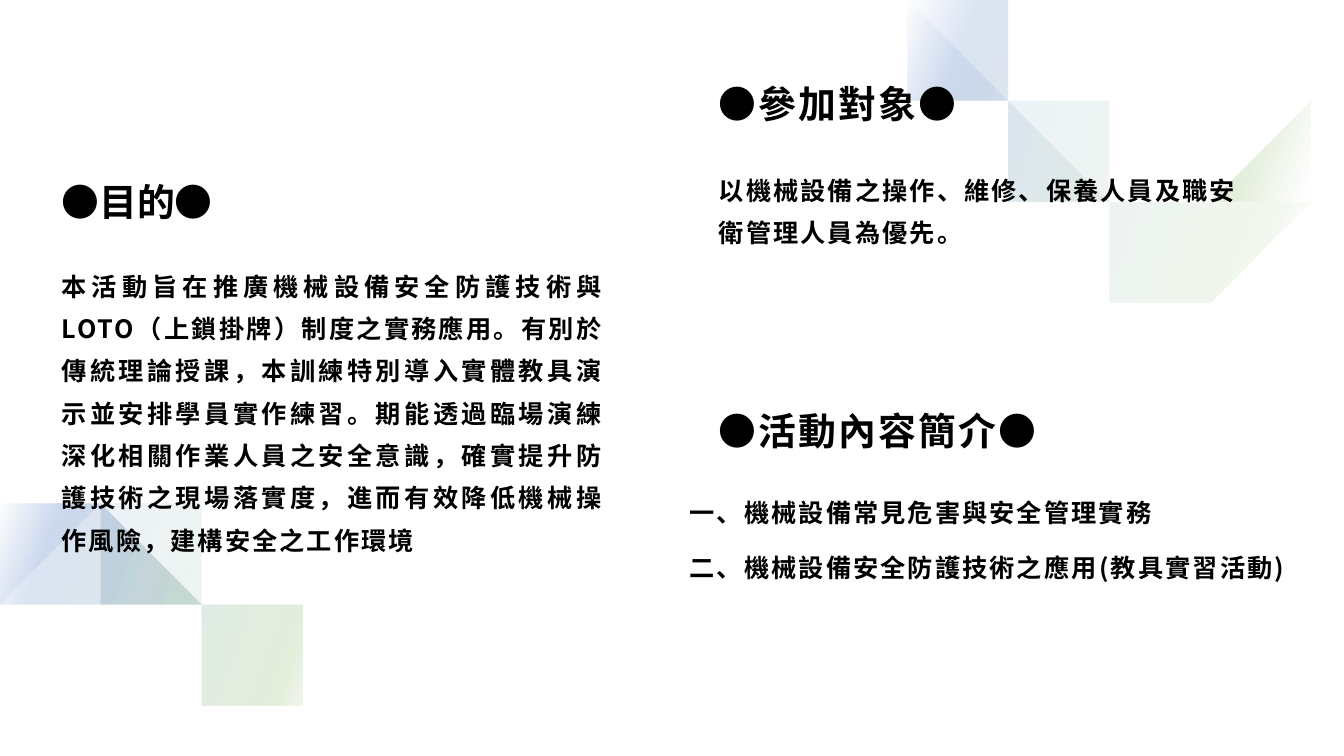
from lxml import etree
from pptx import Presentation
from pptx.dml.color import RGBColor
from pptx.enum.shapes import MSO_SHAPE
from pptx.enum.text import MSO_ANCHOR, PP_ALIGN
from pptx.oxml.ns import qn
from pptx.util import Inches, Pt

TOP, BOTTOM = MSO_ANCHOR.TOP, MSO_ANCHOR.BOTTOM
LEFT, JUSTIFY = PP_ALIGN.LEFT, PP_ALIGN.JUSTIFY
FONT = "Noto Sans CJK JP"
SLIDE_W, SLIDE_H = 13.33, 7.5

# (left, top, width, height), text, letter spacing in points
HEADINGS = [
    ((0.49, 1.69, 5.1, 0.63), "●目的●", 0),
    ((7.01, 0.51, 5.1, 0.84), "●參加對象●", 1.5),
    ((7.01, 3.84, 5.1, 0.75), "●活動內容簡介●", 1.5),
]

# (left, top, width, height), paragraphs, alignment
BODIES = [
    ((0.49, 2.45, 5.62, 3.5),
     ["本活動旨在推廣機械設備安全防護技術與 LOTO（上鎖掛牌）制度之實務應用。"
      "有別於傳統理論授課，本訓練特別導入實體教具演示並安排學員實作練習。"
      "期能透過臨場演練深化相關作業人員之安全意識，確實提升防護技術之現場落實度，"
      "進而有效降低機械操作風險，建構安全之工作環境"], JUSTIFY),
    ((7.01, 1.5, 5.62, 1.51),
     ["以機械設備之操作、維修、保養人員及職安衛管理人員為優先。"], LEFT),
    ((6.72, 4.69, 6.55, 2.33),
     ["一、機械設備常見危害與安全管理實務",
      "二、機械設備安全防護技術之應用(教具實習活動)"], LEFT),
]

# Gradient stops: position in percent, colour
STOPS = [(2, "FFFFFF"), (16, "70AD47"), (85, "4472C4"), (100, "FFFFFF")]
OPACITY, GRADIENT_ANGLE = 10, 200

CORNER_OUTER = [(9.11, 0), (9.33, 0.68), (9.73, 1.22), (10.13, 1.69), (10.6, 2.04),
                (11.15, 2.27), (11.81, 2.35), (12.57, 2.19), (13.33, 1.71)]
ARC_OUTER = [(0, 5.36), (0.49, 5.31), (1.41, 5.46), (2.22, 5.89), (2.84, 6.53),
             (3.16, 7.5)]

# Each ribbon: outer edge, then inner edge running back
RIBBONS = [
    ([(9.07, 0), (9.28, 0.74), (9.56, 1.17), (10.01, 1.82), (10.41, 2.2),
      (10.91, 2.46), (11.47, 2.59), (12.05, 2.59), (12.61, 2.45), (13.33, 2.02)],
     [(13.33, 1.65), (12.93, 1.94), (12.48, 2.18), (12.01, 2.3), (11.5, 2.3),
      (11.01, 2.21), (10.55, 2.01), (10.15, 1.7), (9.81, 1.32), (9.48, 0.92),
      (9.26, 0.6), (9.1, 0)]),
    ([(9.11, 0), (9.3, 0.69), (9.57, 1.11), (10.02, 1.72), (10.44, 2.04),
      (10.94, 2.25), (11.47, 2.37), (12.02, 2.38), (12.55, 2.25), (13.33, 1.81)],
     [(13.33, 1.32), (12.81, 1.7), (12.41, 1.94), (11.97, 2.07), (11.62, 2.09),
      (11.04, 1.99), (10.64, 1.77), (10.29, 1.48), (9.96, 1.14), (9.64, 0.77),
      (9.43, 0.49), (9.27, 0)]),
    (CORNER_OUTER,
     [(13.33, 1.13), (12.44, 1.73), (11.81, 1.88), (10.88, 1.66),
      (10.13, 0.95), (9.71, 0.38), (9.6, 0)]),
    (CORNER_OUTER,
     [(13.33, 1.01), (12.39, 1.65), (11.81, 1.79), (11.34, 1.73),
      (10.9, 1.57), (10.54, 1.28), (10.21, 0.9), (9.8, 0.34), (9.7, 0)]),
    (ARC_OUTER,
     [(2.65, 7.5), (2.48, 6.9), (1.99, 6.33), (1.28, 5.93), (0.49, 5.78), (0, 5.85)]),
    (ARC_OUTER,
     [(2.73, 7.5), (2.55, 6.86), (2.05, 6.27), (1.31, 5.85), (0.49, 5.7), (0, 5.77)]),
    ([(0, 5.34), (0.38, 5.29), (0.83, 5.3), (1.7, 5.54), (2.44, 6.03), (2.97, 6.72),
      (3.16, 7.5)],
     [(3.02, 7.5), (2.97, 7.16), (2.59, 6.46), (2.3, 6.17), (1.6, 5.74),
      (0.81, 5.51), (0.39, 5.5), (0, 5.55)]),
    ([(0, 5.21), (0.37, 5.14), (0.86, 5.13), (1.78, 5.4), (2.35, 5.81), (2.8, 6.34),
      (3, 6.74), (3.17, 7.5)],
     [(3.14, 7.5), (3.03, 6.96), (2.83, 6.57), (2.4, 6.08), (2.05, 5.81),
      (1.47, 5.5), (0.83, 5.33), (0.39, 5.31), (0, 5.36)]),
]


def rgb(color):
    return RGBColor.from_string(color)


def smooth(points):
    """Add the Catmull-Rom midpoint between each pair of neighbouring points."""
    padded = [points[0], *points, points[-1]]
    curve = [points[0]]
    for a, b, c, d in zip(padded, padded[1:], padded[2:], padded[3:]):
        curve.append(tuple((9 * (q + r) - p - s) / 16
                           for p, q, r, s in zip(a, b, c, d)))
        curve.append(c)
    return curve


def fill_gradient(sp):
    """Give a shape the translucent four-stop gradient."""
    sp.fill.gradient()
    grad = sp.fill._xPr.find(qn("a:gradFill"))
    for child in list(grad):
        grad.remove(child)
    stops = etree.SubElement(grad, qn("a:gsLst"))
    for position, color in STOPS:
        gs = etree.SubElement(stops, qn("a:gs"), pos=str(position * 1000))
        clr = etree.SubElement(gs, qn("a:srgbClr"), val=color)
        etree.SubElement(clr, qn("a:alpha"), val=str(OPACITY * 1000))
    etree.SubElement(grad, qn("a:lin"), ang=str(GRADIENT_ANGLE * 60000), scaled="0")


def add_ribbon(slide, outer, inner):
    start, *rest = smooth(outer) + smooth(inner)
    builder = slide.shapes.build_freeform(*start, scale=Inches(1))
    builder.add_line_segments(rest, close=True)
    sp = builder.convert_to_shape()
    sp.shadow.inherit = False
    sp.line.fill.background()
    fill_gradient(sp)


def add_text(slide, box, lines, size, line_spacing, spacing, anchor=TOP, align=LEFT):
    tf = slide.shapes.add_textbox(*map(Inches, box)).text_frame
    tf.word_wrap = True
    tf.vertical_anchor = anchor
    tf.margin_left = tf.margin_top = tf.margin_right = Inches(0.12)
    tf.margin_bottom = Inches(0.1)
    tf.text = "\n".join(lines)
    for i, p in enumerate(tf.paragraphs):
        p.alignment = align
        p.line_spacing = line_spacing
        if i:
            p.space_before = Pt(9.3)
        for r in p.runs:
            r.font.size = Pt(size)
            r.font.bold = True
            r.font.name = FONT
            r.font.color.rgb = rgb("000000")
            rPr = r.font._element
            rPr.set("spc", str(int(spacing * 100)))
            etree.SubElement(rPr, qn("a:ea"), typeface=FONT)


def main():
    prs = Presentation()
    prs.slide_width, prs.slide_height = Inches(SLIDE_W), Inches(SLIDE_H)
    slide = prs.slides.add_slide(prs.slide_layouts[6])
    backdrop = slide.shapes.add_shape(
        MSO_SHAPE.RECTANGLE, 0, 0, prs.slide_width, prs.slide_height)
    backdrop.shadow.inherit = False
    backdrop.fill.solid()
    backdrop.fill.fore_color.rgb = rgb("FFFFFF")
    backdrop.line.fill.background()
    for outer, inner in RIBBONS:
        add_ribbon(slide, outer, inner)
    for box, text, spacing in HEADINGS:
        add_text(slide, box, [text], 27, 1.2, spacing, anchor=BOTTOM)
    for box, lines, align in BODIES:
        add_text(slide, box, lines, 18, 1.4, 1.5, align=align)
    prs.save("out.pptx")


if __name__ == "__main__":
    main()
